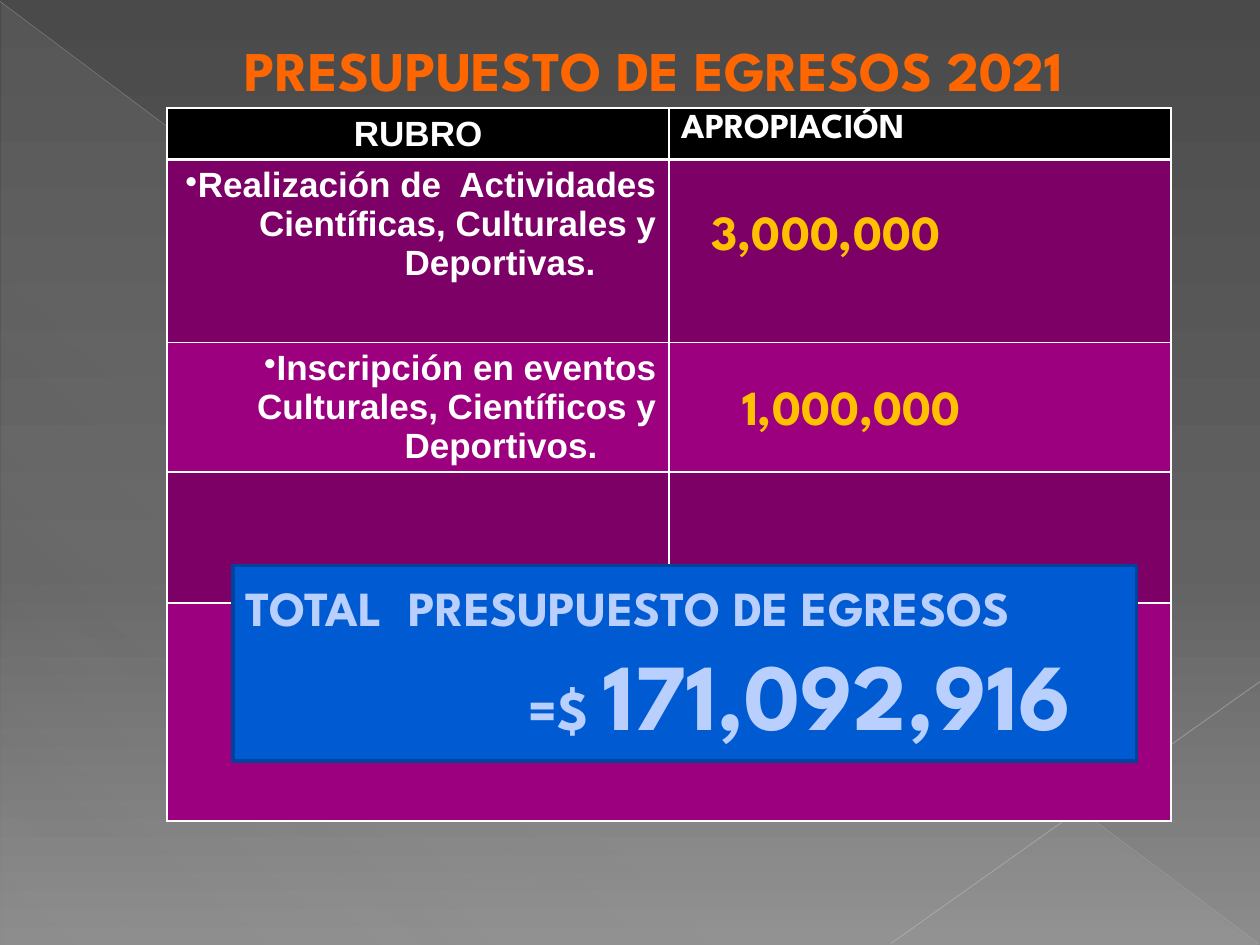
from dataclasses import dataclass

from lxml import etree
from pptx import Presentation
from pptx import util as u
from pptx.dml.color import RGBColor
from pptx.enum import shapes, text
from pptx.oxml import ns, parse_xml
from pptx.util import Cm, Pt


@dataclass(frozen=True)
class Theme:
    display: str = "League Spartan"
    body: str = "Arial"
    white: str = "FFFFFF"
    title: str = "FF6600"
    amount: str = "FFC000"
    amount_outline: str = "FB2C83"
    header: str = "000000"
    dark_band: str = "7D0066"
    light_band: str = "9C007F"
    total_fill: str = "005BD3"
    total_line: str = "00439C"
    total_text: str = "B9D0FF"
    table_size: int = 20
    amount_size: int = 28
    title_size: int = 32
    total_size: int = 54


THEME = Theme()
BACKDROP = [(0, "4A4A4A", 100), (60, "626262", 100), (100, "8C8C8C", 100)]
SHEEN = [(0, "D2D2D2", 10), (70, "D2D2D2", 8), (100, "D2D2D2", 1)]


def style(font, name, size, color):
    font.name, font.size, font.bold = name, Pt(size), True
    font.color.rgb = RGBColor.from_string(color)


def color_xml(color, alpha=100):
    return f'<a:srgbClr val="{color}"><a:alpha val="{alpha * 1000}"/></a:srgbClr>'


def set_gradient(fill, parent, stops, angle):
    """Replace a fill with a linear gradient of any number of stops."""
    fill.gradient()
    old = parent.find(ns.qn("a:gradFill"))
    marks = "".join(f'<a:gs pos="{pos * 1000}">{color_xml(color, alpha)}</a:gs>'
                    for pos, color, alpha in stops)
    parent.replace(old, parse_xml(
        f'<a:gradFill {ns.nsdecls("a")} rotWithShape="1"><a:gsLst>{marks}</a:gsLst>'
        f'<a:lin ang="{angle * 60000}" scaled="0"/></a:gradFill>'))


def add_ray(slide, start, end, color, width, alpha):
    ray = slide.shapes.add_connector(
        shapes.MSO_CONNECTOR.STRAIGHT, *map(Cm, start + end))
    ray.line.width = Pt(width)
    ray.line.color.rgb = RGBColor.from_string(color)
    properties = ray._element.spPr
    tone = properties.find(".//" + ns.qn("a:srgbClr"))
    etree.SubElement(tone, ns.qn("a:alpha"), val=str(alpha * 1000))
    etree.SubElement(properties, ns.qn("a:effectLst"))


def add_backdrop(slide):
    fill = slide.background.fill
    fill.solid()
    set_gradient(fill, slide._element.cSld.find(".//" + ns.qn("p:bgPr")), BACKDROP, 90)
    corner = slide.shapes.add_shape(
        shapes.MSO_SHAPE.RIGHT_TRIANGLE, Cm(0.03), Cm(0.05), Cm(25.35), Cm(19))
    corner.shadow.inherit = False
    corner.line.fill.background()
    set_gradient(corner.fill, corner._element.spPr, SHEEN, 133)
    add_ray(slide, (0, 0.03), (25.37, 19.02), "BFBFBF", 0.39, 35)
    add_ray(slide, (25.4, 13.74), (17.96, 19.02), "C6C6C6", 0.47, 45)


def fill_cell(cell, content, font_name, align=None, bullet=False):
    paragraph = cell.text_frame.paragraphs[0]
    paragraph.text = content
    paragraph.alignment = align
    style(paragraph.font, font_name, THEME.table_size, THEME.white)
    if bullet:
        properties = paragraph._p.get_or_add_pPr()
        properties.set("marL", "0")
        properties.set("indent", "0")
        properties.insert(0, parse_xml(f'<a:buChar {ns.nsdecls("a")} char="•"/>'))


def underline_cell(cell):
    cell._tc.get_or_add_tcPr().insert(0, parse_xml(
        f'<a:lnB {ns.nsdecls("a")} w="{Pt(2)}"><a:solidFill>'
        f'{color_xml(THEME.white)}</a:solidFill></a:lnB>'))


def add_budget_table(slide):
    heights = [1.04, 3.68, 2.57, 2.64, 4.39]
    table = slide.shapes.add_table(
        len(heights), 2, Cm(3.37), Cm(2.18), Cm(20.24), Cm(sum(heights))).table
    bands = [THEME.header] + [THEME.dark_band, THEME.light_band] * 2
    for row, height, band in zip(table.rows, heights, bands):
        row.height = Cm(height)
        for cell in row.cells:
            cell.fill.solid()
            cell.fill.fore_color.rgb = RGBColor.from_string(band)
    for header in table.rows[0].cells:
        underline_cell(header)
    table.cell(4, 0).merge(table.cell(4, 1))

    align = text.PP_ALIGN
    fill_cell(table.cell(0, 0), "RUBRO", THEME.body, align.CENTER)
    fill_cell(table.cell(0, 1), "APROPIACIÓN", THEME.display)
    items = ["Realización de  Actividades Científicas, Culturales y Deportivas.\t",
             "Inscripción en eventos Culturales, Científicos y Deportivos.\t"]
    for index, item in enumerate(items, start=1):
        fill_cell(table.cell(index, 0), item, THEME.body, align.RIGHT, bullet=True)


def place_title(slide):
    title = slide.shapes.title
    title.left, title.top, title.width, title.height = map(
        Cm, (3.76, 0.58, 18.85, 1.63))
    title.text_frame.vertical_anchor = text.MSO_ANCHOR.TOP
    paragraph = title.text_frame.paragraphs[0]
    paragraph.text = "PRESUPUESTO DE EGRESOS 2021"
    paragraph.alignment = text.PP_ALIGN.CENTER
    style(paragraph.font, THEME.display, THEME.title_size, THEME.title)
    # Bring the title in front of the backdrop
    slide.shapes._spTree.append(title._element)


def add_amount(slide, amount, left, top):
    box = slide.shapes.add_textbox(Cm(left), Cm(top), Cm(6.32), Cm(1.45))
    box.text_frame.word_wrap = True
    paragraph = box.text_frame.paragraphs[0]
    paragraph.text = amount
    paragraph.alignment = text.PP_ALIGN.CENTER
    style(paragraph.font, THEME.display, THEME.amount_size, THEME.amount)
    paragraph.runs[0]._r.get_or_add_rPr().insert(0, parse_xml(
        f'<a:ln {ns.nsdecls("a")} w="{Pt(0.83)}"><a:solidFill>'
        f'{color_xml(THEME.amount_outline)}</a:solidFill></a:ln>'))


def add_total(slide):
    box = slide.shapes.add_shape(
        shapes.MSO_SHAPE.RECTANGLE, Cm(4.7), Cm(11.4), Cm(18.21), Cm(3.94))
    box.shadow.inherit = False
    box.fill.solid()
    box.fill.fore_color.rgb = RGBColor.from_string(THEME.total_fill)
    box.line.color.rgb = RGBColor.from_string(THEME.total_line)
    box.line.width = Pt(2)
    label = box.text_frame.paragraphs[0]
    label.text = "TOTAL  PRESUPUESTO DE EGRESOS"
    label.alignment = text.PP_ALIGN.LEFT
    style(label.font, THEME.display, THEME.amount_size, THEME.total_text)
    total = box.text_frame.add_paragraph()
    total.alignment = text.PP_ALIGN.LEFT
    total._p.get_or_add_pPr().set("marL", str(Cm(5.7)))
    for part, size in (("=$ ", THEME.title_size), ("171,092,916", THEME.total_size)):
        run = total.add_run()
        run.text = part
        style(run.font, THEME.display, size, THEME.total_text)


def main():
    deck = Presentation()
    deck.slide_width, deck.slide_height = u.Cm(25.4), u.Cm(19.05)
    slide = deck.slides.add_slide(deck.slide_layouts[5])
    add_backdrop(slide)
    add_budget_table(slide)
    place_title(slide)
    # Amounts beside each item
    add_amount(slide, "3,000,000", 13.49, 3.94)
    add_amount(slide, "1,000,000", 14, 7.47)
    add_total(slide)
    deck.save("out.pptx")


if __name__ == "__main__":
    main()
